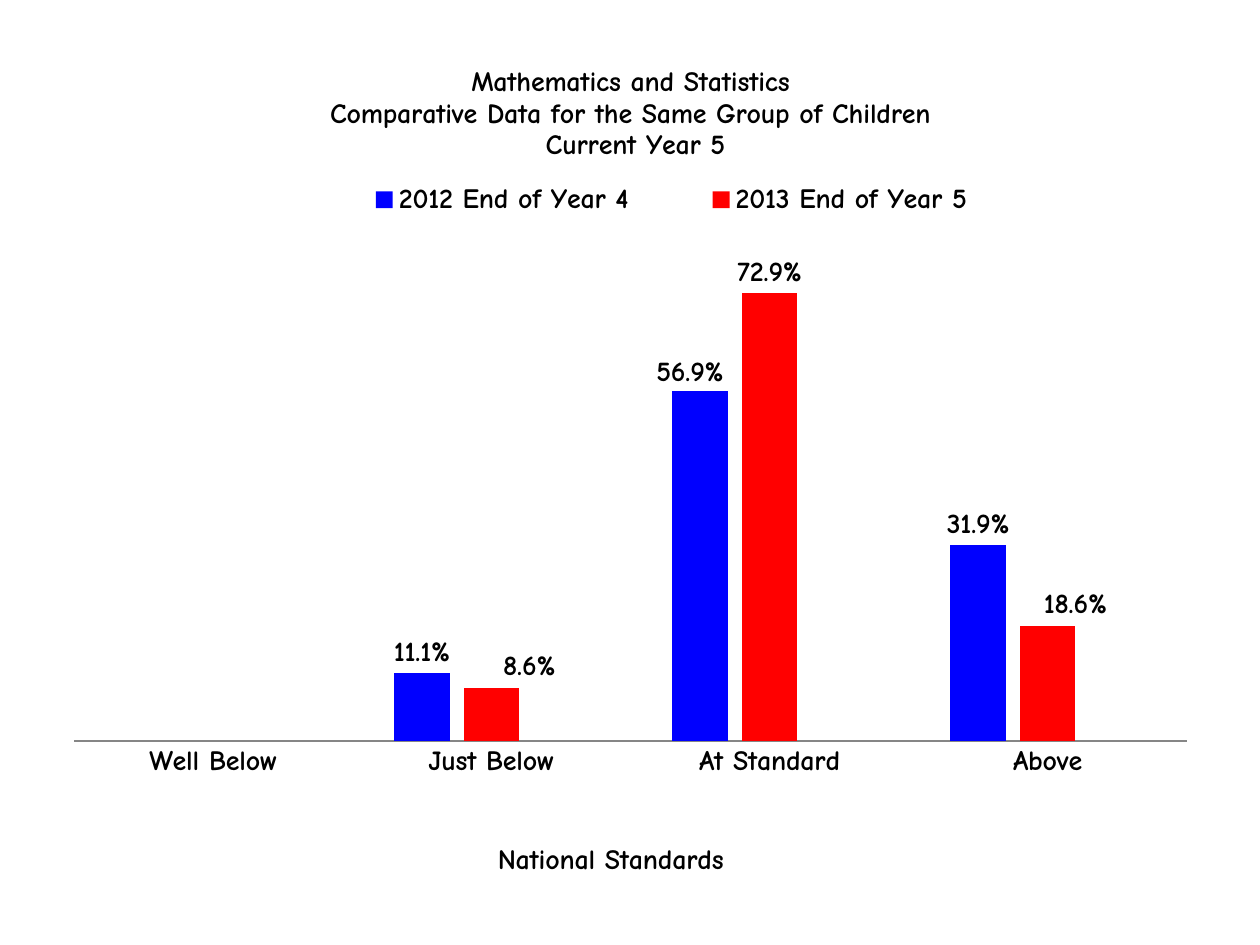
from lxml import etree
from pptx import Presentation, util as u
from pptx.chart.data import CategoryChartData
from pptx.dml.color import RGBColor
from pptx.enum import chart as ch
from pptx.oxml.ns import qn

COLORS = {"text": "000000", "axis": "868686", "year4": "0000FF",
          "year5": "FF0000", "spare": "9BBB59"}
TEXT_FORMAT = {"name": "Comic Neue", "size": u.Pt(16), "bold": True}
CHART_WIDTH, CHART_HEIGHT = u.Inches(9.13), u.Inches(6.85)


def style(font):
    for key, value in TEXT_FORMAT.items():
        setattr(font, key, value)
    font.color.rgb = RGBColor.from_string(COLORS["text"])


def place(part, index, modes, **inches):
    """Give a chart part a manual layout as its child number `index`."""
    for old in part.findall(qn("c:layout")):
        part.remove(old)
    layout = etree.Element(qn("c:layout"))
    part.insert(index, layout)
    manual = etree.SubElement(layout, qn("c:manualLayout"))
    for tag, value in modes.items():
        etree.SubElement(manual, qn(f"c:{tag}")).set("val", value)
    for tag, value in inches.items():
        whole = CHART_WIDTH if tag in "xw" else CHART_HEIGHT
        fraction = u.Inches(value) / whole
        etree.SubElement(manual, qn(f"c:{tag}")).set("val", f"{fraction:.4f}")


prs = Presentation()
prs.slide_width, prs.slide_height = u.Inches(10), u.Inches(7.5)
slide = prs.slides.add_slide(prs.slide_layouts[6])

results = CategoryChartData(number_format="0.0%")
results.categories = ["Well Below", "Just Below", "At Standard", "Above"]
results.add_series("2012 End of Year 4", [None, 0.111, 0.569, 0.319])
results.add_series("2013 End of Year 5", [None, 0.086, 0.729, 0.186])
results.add_series("Series 3", [None] * 4)
chart = slide.shapes.add_chart(
    ch.XL_CHART_TYPE.COLUMN_CLUSTERED, u.Inches(0.43), u.Inches(0.29),
    CHART_WIDTH, CHART_HEIGHT, results).chart
chart.font.name, chart.font.size = "Calibri", u.Pt(10)

# Headings
chart.has_title = True
headings = [
    (chart.chart_title, ["Mathematics and Statistics",
                         "Comparative Data for the Same Group of Children",
                         " Current Year 5"]),
    (chart.category_axis.axis_title, ["National Standards"]),
]
for heading, lines in headings:
    frame = heading.text_frame
    frame.text = "\n".join(lines)
    for paragraph in frame.paragraphs:
        style(paragraph.font)
        for run in paragraph.runs:
            style(run.font)

# Axes
levels = chart.category_axis
levels.major_tick_mark = levels.minor_tick_mark = ch.XL_TICK_MARK.NONE
levels.format.line.color.rgb = RGBColor.from_string(COLORS["axis"])
levels.format.line.width = u.Pt(1)
style(levels.tick_labels.font)
share = chart.value_axis
share.minimum_scale, share.maximum_scale = 0, 0.8
share.has_major_gridlines = False
share.tick_labels.number_format = "0.0%"
share.visible = False

# Legend, without the empty third series
chart.has_legend = True
chart.legend.position = ch.XL_LEGEND_POSITION.TOP
chart.legend.include_in_layout = False
style(chart.legend.font)
legend = chart.element.xpath("c:chart/c:legend")[0]
entry = etree.Element(qn("c:legendEntry"))
for tag, value in (("idx", "2"), ("delete", "1")):
    etree.SubElement(entry, qn(f"c:{tag}")).set("val", value)
legend.find(qn("c:legendPos")).addnext(entry)

# Columns
plot = chart.plots[0]
plot.gap_width, plot.overlap, plot.vary_by_categories = 150, -25, False
for series, color in zip(plot.series, ("year4", "year5", "spare")):
    series.format.fill.solid()
    series.format.fill.fore_color.rgb = RGBColor.from_string(COLORS[color])
    series.invert_if_negative = False
    labels = series.data_labels
    labels.show_value = True
    labels.number_format, labels.number_format_is_linked = "0.0%", False
    labels.position = ch.XL_LABEL_POSITION.OUTSIDE_END
    style(labels.font)

# Labels moved off their columns: series, point, shift right and down
for series_no, point_no, right, down in (
        (0, 2, -0.08, 0.01), (1, 1, 0.3, -0.01), (1, 3, 0.22, -0.01)):
    label = plot.series[series_no].points[point_no].data_label
    style(label.font)
    label.position = ch.XL_LABEL_POSITION.OUTSIDE_END
    point = chart.element.xpath(
        f"//c:ser[c:idx/@val={series_no}]//c:dLbl[c:idx/@val={point_no}]")[0]
    place(point, 1, {}, x=right, y=down)

# Placement inside the chart
edge = {"xMode": "edge", "yMode": "edge"}
place(chart.element.xpath("c:chart/c:title")[0], 1, edge, x=2.16, y=0.19)
place(chart.element.xpath("//c:catAx/c:title")[0], 1, edge, x=3.48, y=6.35)
place(legend, 2, edge, x=1.96, y=1.09, w=5.88, h=0.41)
place(chart.element.xpath("c:chart/c:plotArea")[0], 0,
      {"layoutTarget": "inner", **edge}, x=0.16, y=1.69, w=8.83, h=3.9)

prs.save("out.pptx")
